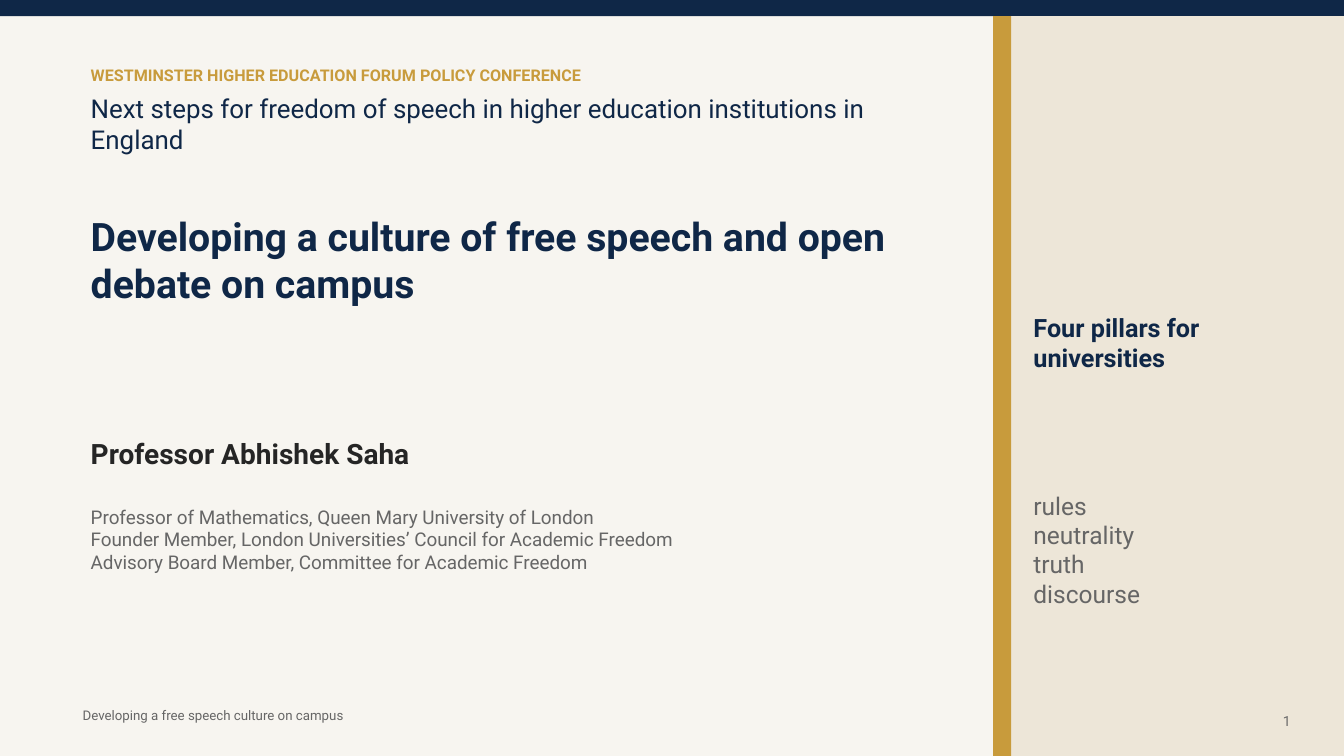
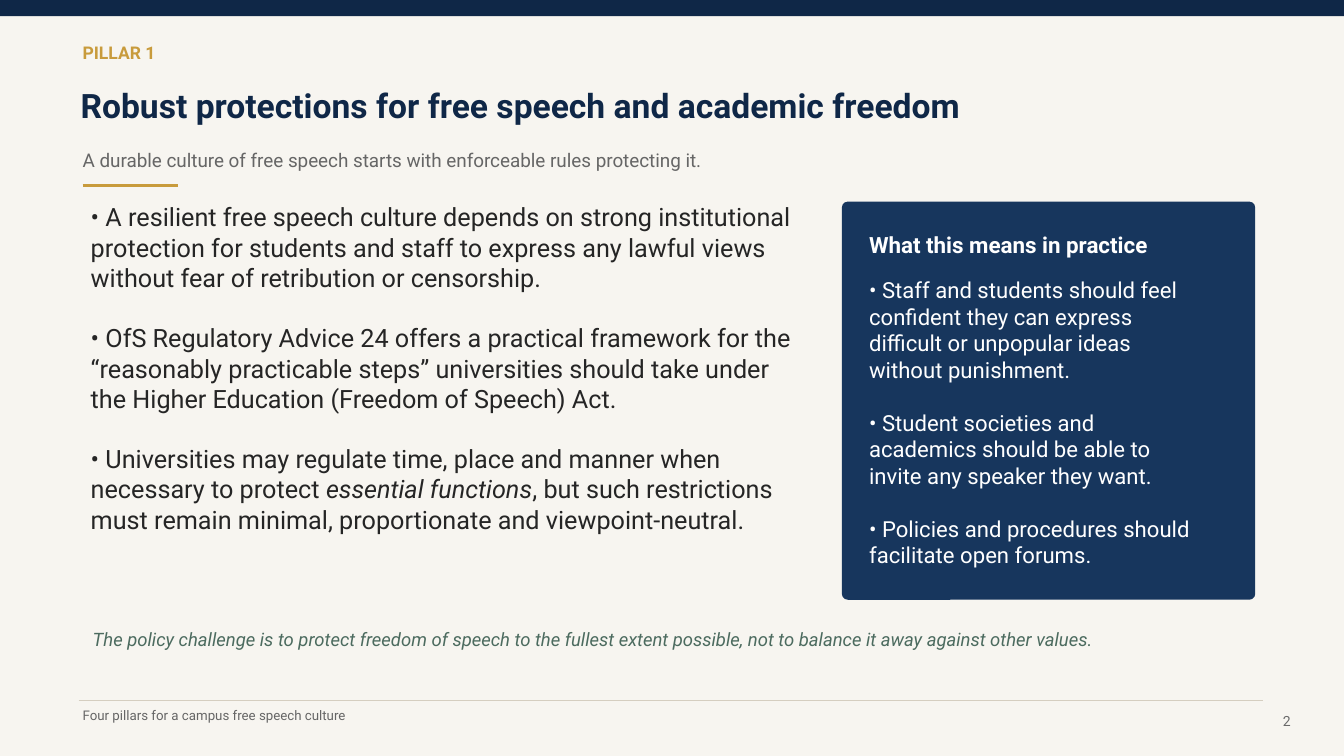
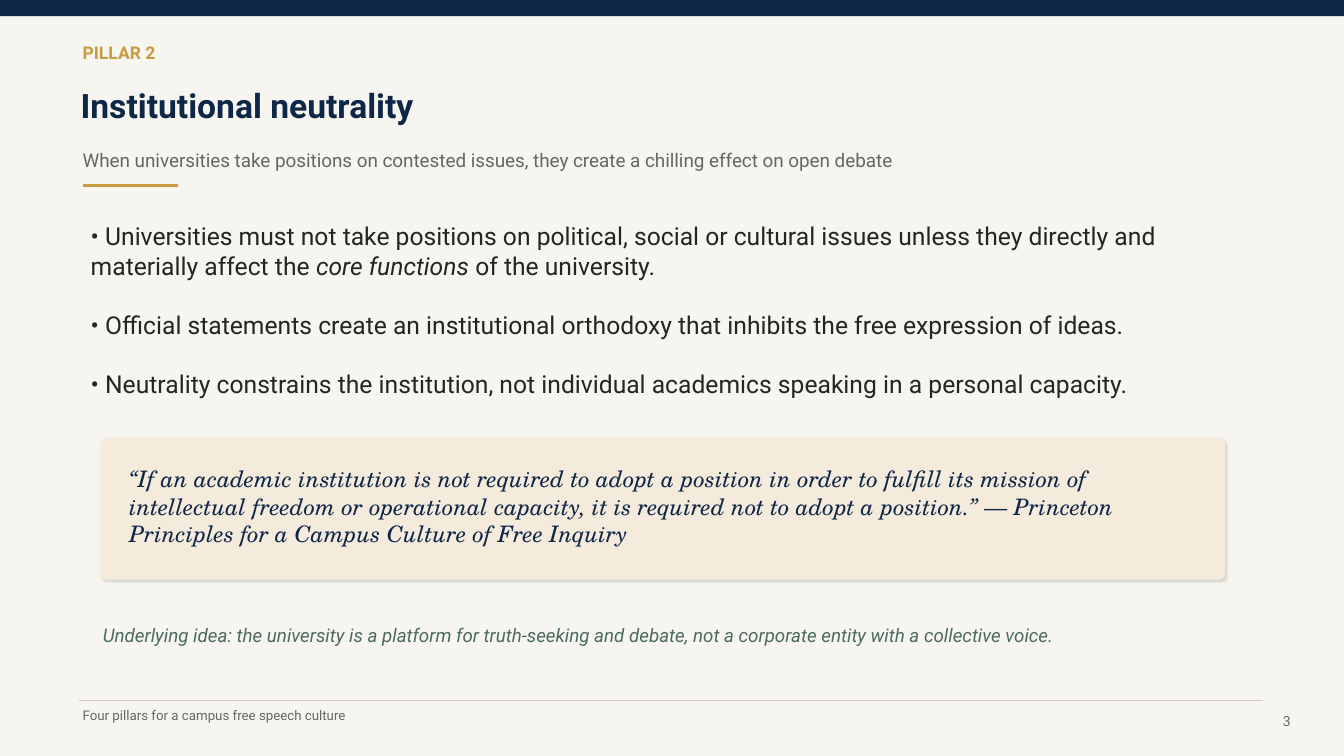
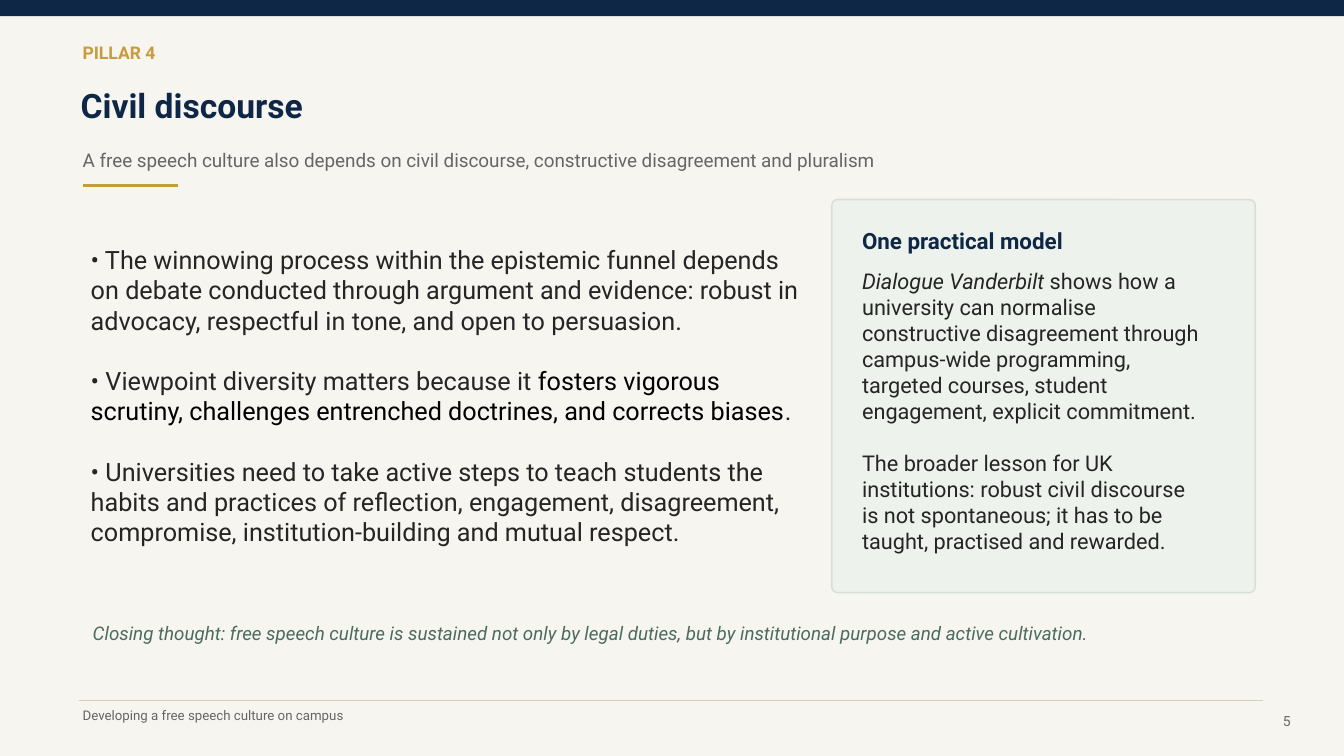
from dataclasses import dataclass
from lxml.etree import SubElement
from pptx import Presentation
from pptx.dml.color import RGBColor
from pptx.enum.shapes import MSO_CONNECTOR, MSO_SHAPE
from pptx.enum.text import MSO_ANCHOR, PP_ALIGN
from pptx.oxml.ns import qn
from pptx.util import Inches, Pt


@dataclass(frozen=True)
class Theme:
    sans: str = "Roboto"
    serif: str = "TeX Gyre Schola"
    paper: str = "F7F5F0"
    navy: str = "0F2747"
    blue: str = "17365D"
    gold: str = "C89B3C"
    sand: str = "EDE6D8"
    cream: str = "F4EBDD"
    mint: str = "EEF2ED"
    edge: str = "D8E0D6"
    rule: str = "D5CEC0"
    ink: str = "252525"
    gray: str = "666666"
    page: str = "6A6A6A"
    green: str = "4C6B5F"
    white: str = "FFFFFF"
    black: str = "000000"
    cover: float = 28
    title: float = 24
    name: float = 20
    event: float = 18.5
    body: float = 18
    list: float = 17.5
    head: float = 16
    lead: float = 13.5
    label: float = 12.5
    small: float = 11.5
    num: float = 10
    foot: float = 9.5
    leading: float = 1.2


@dataclass(frozen=True)
class Part:
    text: str
    italic: bool | None = None
    color: str | None = None


T = Theme()
WIDE, HIGH = 13.33, 7.5
BAND = 0.16
LEFT = 0.82


def rgb(color):
    return RGBColor.from_string(color)


def write(slide, box, paras, size, color, bold=None, italic=None, font=T.sans,
          gap=False, anchor=MSO_ANCHOR.MIDDLE, align=None, pad=(0, 0)):
    frame = slide.shapes.add_textbox(*map(Inches, box)).text_frame
    frame.word_wrap = True
    frame.vertical_anchor = anchor
    frame.margin_left = frame.margin_right = Inches(pad[0])
    frame.margin_top = frame.margin_bottom = Inches(pad[1])
    for i, parts in enumerate([paras] if isinstance(paras, str) else paras):
        para = frame.add_paragraph() if i else frame.paragraphs[0]
        if gap and i:
            para.space_before = Pt(round(size * T.leading, 1))
        if align is not None:
            para.alignment = align
        look = para.font
        look.name, look.size = font, Pt(size)
        look.bold, look.italic = bold, italic
        look.color.rgb = rgb(color)
        for part in [Part(parts)] if isinstance(parts, str) else parts:
            run = para.add_run()
            run.text = part.text
            if part.italic:
                run.font.italic = True
            if part.color:
                run.font.color.rgb = rgb(part.color)


def block(slide, box, fill, line=None, corner=None):
    kind = MSO_SHAPE.RECTANGLE if corner is None else MSO_SHAPE.ROUNDED_RECTANGLE
    shape = slide.shapes.add_shape(kind, *map(Inches, box))
    shape.shadow.inherit = False
    shape.fill.solid()
    shape.fill.fore_color.rgb = rgb(fill)
    if line:
        shape.line.color.rgb = rgb(line)
        shape.line.width = Pt(1.1)
    else:
        shape.line.fill.background()
    if corner is not None:
        shape.adjustments[0] = corner
    return shape


def stroke(slide, left, top, width, color, weight):
    line = slide.shapes.add_connector(
        MSO_CONNECTOR.STRAIGHT, *map(Inches, (left, top, left + width, top)))
    line.line.color.rgb = rgb(color)
    line.line.width = Pt(weight)
    SubElement(line._element.spPr, qn("a:effectLst"))


def shade(shape):
    cast = SubElement(shape._element.spPr.find(qn("a:effectLst")), qn("a:outerShdw"),
                      blurRad=str(Pt(1.3)), dist=str(Pt(1)), dir="2700000",
                      algn="tl", rotWithShape="0")
    tint = SubElement(cast, qn("a:srgbClr"), val=T.black)
    SubElement(tint, qn("a:alpha"), val="14000")


def start(deck):
    slide = deck.slides.add_slide(deck.slide_layouts[6])
    slide.background.fill.solid()
    slide.background.fill.fore_color.rgb = rgb(T.paper)
    block(slide, (0, 0, WIDE, BAND), T.navy)
    return slide


def footer(slide, note, page):
    write(slide, (LEFT, 7, 3.8, 0.18), note, T.foot, T.gray)
    write(slide, (12.55, 7.02, 0.35, 0.2), page, T.num, T.page,
          anchor=MSO_ANCHOR.TOP, align=PP_ALIGN.RIGHT, pad=(0.1, 0.05))


def pillar(deck, label, title, lead, note, page):
    slide = start(deck)
    stroke(slide, 0.78, 6.95, 11.75, T.rule, 1)
    write(slide, (LEFT, 0.38, 5.8, 0.28), label, T.label, T.gold, bold=True)
    write(slide, (0.8, 0.68, 10.6, 0.72), title, T.title, T.navy, bold=True)
    write(slide, (LEFT, 1.46, 10.8, 0.26), lead, T.lead, T.gray)
    stroke(slide, LEFT, 1.84, 0.95, T.gold, 1.8)
    footer(slide, note, page)
    return slide


def points(slide, box, paras, size=T.body, anchor=MSO_ANCHOR.MIDDLE):
    write(slide, box, paras, size, T.ink, gap=True, anchor=anchor)


def closing(slide, box, text, size=13.4):
    write(slide, box, text, size, T.green, italic=True)


def card(slide, box, inset, head, paras, size, fill, tone, ink, line=None):
    left, top, width, height = box
    west, north, east, south = inset
    block(slide, box, fill, line, 0.015)
    write(slide, (left + west, top + north, 3.5, 0.3), head, T.head, tone, bold=True)
    drop = north + 0.46
    write(slide, (left + west, top + drop, width - west - east, height - drop - south),
          paras, size, ink, gap=True)


def quote(slide, box, text):
    left, top, width, height = box
    shade(block(slide, box, T.cream, corner=0.043))
    write(slide, (left + 0.28, top + 0.2, width - 0.56, height - 0.46), text,
          16.2, T.navy, italic=True, font=T.serif)


def panel(slide, box):
    left, top, width, height = box
    block(slide, box, T.sand)
    block(slide, (left, top, 0.18, height), T.gold)
    write(slide, (left + 0.4, top + 2.44, 2.55, 1.6), "Four pillars for universities",
          T.body, T.navy, bold=True)
    write(slide, (left + 0.4, top + 4.59, 2.2, 1.4),
          ["rules", "neutrality", "truth", "discourse"], T.list, T.gray)


def cover(deck, note):
    slide = start(deck)
    panel(slide, (9.85, BAND, WIDE - 9.85, HIGH - BAND))
    left = 0.9
    write(slide, (left, 0.62, 7.5, 0.24),
          "WESTMINSTER HIGHER EDUCATION FORUM POLICY CONFERENCE",
          T.small, T.gold, bold=True)
    write(slide, (left, 0.95, 8.1, 0.55),
          "Next steps for freedom of speech in higher education institutions in England",
          T.event, T.navy)
    write(slide, (left, 2.05, 8.1, 1.05),
          "Developing a culture of free speech and open debate on campus",
          T.cover, T.navy, bold=True)
    write(slide, (left, 4.3, 5.5, 0.4), "Professor Abhishek Saha", T.name, T.ink, bold=True)
    write(slide, (left, 4.75, 7.4, 1.2), [
        "Professor of Mathematics, Queen Mary University of London",
        "Founder Member, London Universities’ Council for Academic Freedom",
        "Advisory Board Member, Committee for Academic Freedom",
    ], T.lead, T.gray)
    footer(slide, note, "1")


def rules(deck, note):
    slide = pillar(deck, "PILLAR 1", "Robust protections for free speech and academic freedom",
                   "A durable culture of free speech starts with enforceable rules protecting it.",
                   note, "2")
    points(slide, (0.9, 2, 7.05, 3.95), [
        "• A resilient free speech culture depends on strong institutional protection for students and staff to express any lawful views without fear of retribution or censorship.",
        "• OfS Regulatory Advice 24 offers a practical framework for the “reasonably practicable steps” universities should take under the Higher Education (Freedom of Speech) Act.",
        [Part("• Universities may regulate time, place and manner when necessary to protect "),
         Part("essential functions", italic=True),
         Part(", but such restrictions must remain minimal, proportionate and viewpoint-neutral.")],
    ], anchor=MSO_ANCHOR.TOP)
    card(slide, (8.35, 2, 4.1, 3.95), (0.27, 0.28, 0.57, 0.31), "What this means in practice", [
        "• Staff and students should feel confident they can express difficult or unpopular ideas without punishment.",
        "• Student societies and academics should be able to invite any speaker they want.",
        "• Policies and procedures should facilitate open forums.",
    ], 15.8, T.blue, T.white, T.white)
    closing(slide, (0.92, 6.18, 11.2, 0.32),
            "The policy challenge is to protect freedom of speech to the fullest extent possible, not to balance it away against other values.",
            13.2)


def neutral(deck, note):
    slide = pillar(deck, "PILLAR 2", "Institutional neutrality",
                   "When universities take positions on contested issues, they create a chilling effect on open debate",
                   note, "3")
    points(slide, (0.9, 2, 11.3, 2.15), [
        [Part("• Universities must not take positions on political, social or cultural issues unless they directly and materially affect the "),
         Part("core functions", italic=True),
         Part(" of the university.")],
        "• Official statements create an institutional orthodoxy that inhibits the free expression of ideas.",
        "• Neutrality constrains the institution, not individual academics speaking in a personal capacity.",
    ], 17.6)
    quote(slide, (1, 4.35, 11.15, 1.4),
          "“If an academic institution is not required to adopt a position in order to fulfill its mission of intellectual freedom or operational capacity, it is required not to adopt a position.” — Princeton Principles for a Campus Culture of Free Inquiry")
    closing(slide, (1.02, 6.18, 11, 0.24),
            "Underlying idea: the university is a platform for truth-seeking and debate, not a corporate entity with a collective voice.")


def civil(deck, note):
    slide = pillar(deck, "PILLAR 4", "Civil discourse",
                   "A free speech culture also depends on civil discourse, constructive disagreement and pluralism",
                   note, "5")
    points(slide, (0.9, 2, 7.05, 3.85), [
        "• The winnowing process within the epistemic funnel depends on debate conducted through argument and evidence: robust in advocacy, respectful in tone, and open to persuasion.",
        [Part("• Viewpoint diversity matters because it "),
         Part("fosters vigorous scrutiny, challenges entrenched doctrines, and corrects biases",
              color=T.black),
         Part(".")],
        "• Universities need to take active steps to teach students the habits and practices of reflection, engagement, disagreement, compromise, institution-building and mutual respect.",
    ])
    card(slide, (8.25, 1.98, 4.2, 3.9), (0.3, 0.26, 0.55, 0.43), "One practical model", [
        [Part("Dialogue Vanderbilt ", italic=True),
         Part("shows how a university can normalise constructive disagreement through campus-wide programming, targeted courses, student engagement, explicit commitment.")],
        "The broader lesson for UK institutions: robust civil discourse is not spontaneous; it has to be taught, practised and rewarded.",
    ], 15.5, T.mint, T.navy, T.ink, T.edge)
    closing(slide, (0.92, 6.12, 11.3, 0.32),
            "Closing thought: free speech culture is sustained not only by legal duties, but by institutional purpose and active cultivation.")


def main():
    deck = Presentation()
    deck.slide_width, deck.slide_height = Inches(WIDE), Inches(HIGH)
    talk = "Developing a free speech culture on campus"
    four = "Four pillars for a campus free speech culture"
    cover(deck, talk)
    rules(deck, four)
    neutral(deck, four)
    civil(deck, talk)
    deck.save("out.pptx")


if __name__ == "__main__":
    main()
